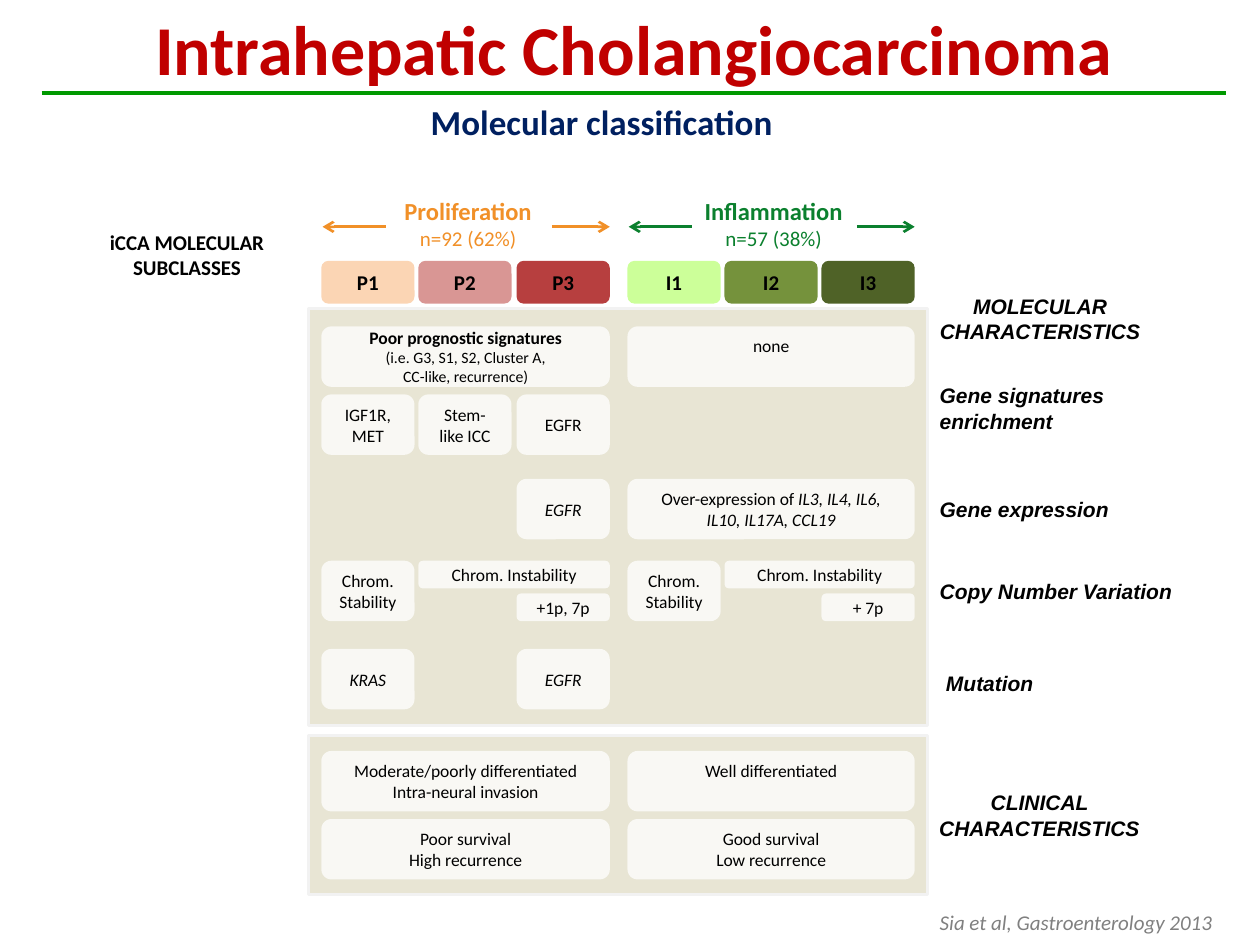
import pptx
import pptx.util
import pptx.dml.color
import pptx.enum.shapes
import pptx.enum.text
import pptx.oxml.ns
from lxml import etree

Inches = pptx.util.Inches
Pt = pptx.util.Pt
RGBColor = pptx.dml.color.RGBColor
SHAPE = pptx.enum.shapes.MSO_SHAPE
ALIGN = pptx.enum.text.PP_ALIGN
ANCHOR = pptx.enum.text.MSO_ANCHOR

BLACK = RGBColor(0, 0, 0)
WHITE = RGBColor(255, 255, 255)
RED = RGBColor(0xC0, 0, 0)
NAVY = RGBColor(0, 0x20, 0x60)
GRAY = RGBColor(0x80, 0x80, 0x80)
RULE_GREEN = RGBColor(0, 0x99, 0)
ORANGE = RGBColor(0xF1, 0x90, 0x28)
GREEN = RGBColor(0x0B, 0x80, 0x2E)
SAND = RGBColor(0xE8, 0xE5, 0xD4)
PANEL_EDGE = RGBColor(0xF2, 0xF2, 0xF2)

# Grid: two classes of three columns each
COLUMN_LEFT = [2.55, 3.32, 4.1, 4.98, 5.75, 6.52]
COLUMN_WIDTH = 0.74
ROW_TOP = {"subclass": 2.07, "signature": 2.59, "marker": 3.13,
           "expression": 3.8, "copy number": 4.45, "arm": 4.71,
           "mutation": 5.15, "grade": 5.96, "outcome": 6.5}
CELL_HEIGHT, SUBCLASS_HEIGHT, STRIP_HEIGHT = 0.48, 0.34, 0.22

# Content: a paragraph is a list of (text, size, style) runs
TITLE = [[("Intrahepatic Cholangiocarcinoma", 40, "b")]]
SUBTITLE = [[("Molecular classification", 20, "b")]]
CITATION = [[("Sia et al, Gastroenterology 2013", 12, "i")]]
SUBCLASS_LABEL = [[("iCCA MOLECULAR SUBCLASSES", 12, "b")]]
PANELS = [(2.45, 3.31), (5.84, 1.26)]
CLASSES = [("Proliferation", "n=92 (62%)", ORANGE, 0),
           ("Inflammation", "n=57 (38%)", GREEN, 3)]
SUBCLASSES = [("P1", RGBColor(0xFB, 0xD5, 0xB4)),
              ("P2", RGBColor(0xD9, 0x96, 0x94)),
              ("P3", RGBColor(0xB7, 0x3F, 0x3F)),
              ("I1", RGBColor(0xCC, 0xFF, 0x99)),
              ("I2", RGBColor(0x75, 0x92, 0x3C)),
              ("I3", RGBColor(0x4F, 0x62, 0x27))]


def lines(*texts, style=""):
    return [[(text, 10, style)] for text in texts]


# row, first column, columns spanned, paragraphs, height, anchor
MIDDLE, TOP = ANCHOR.MIDDLE, ANCHOR.TOP
CELLS = [
    ("signature", 0, 3, [[("Poor prognostic signatures", 10, "b")],
                         [("(i.e. G3, S1, S2, Cluster A,", 9, "")],
                         [("CC-like, recurrence)", 9, "")]], CELL_HEIGHT, MIDDLE),
    ("signature", 3, 3, lines("none"), CELL_HEIGHT, TOP),
    ("marker", 0, 1, lines("IGF1R, MET"), CELL_HEIGHT, MIDDLE),
    ("marker", 1, 1, lines("Stem-like ICC"), CELL_HEIGHT, MIDDLE),
    ("marker", 2, 1, lines("EGFR"), CELL_HEIGHT, MIDDLE),
    ("expression", 2, 1, lines("EGFR", style="i"), CELL_HEIGHT, MIDDLE),
    ("expression", 3, 3, [[("Over-expression of ", 10, ""),
                           ("IL3, IL4, IL6, IL10, IL17A, CCL19", 10, "i")]],
     CELL_HEIGHT, TOP),
    ("copy number", 0, 1, lines("Chrom. Stability"), CELL_HEIGHT, MIDDLE),
    ("copy number", 1, 2, lines("Chrom. Instability"), STRIP_HEIGHT, MIDDLE),
    ("arm", 2, 1, lines("+1p, 7p"), STRIP_HEIGHT, MIDDLE),
    ("copy number", 3, 1, lines("Chrom. Stability"), CELL_HEIGHT, MIDDLE),
    ("copy number", 4, 2, lines("Chrom. Instability"), STRIP_HEIGHT, MIDDLE),
    ("arm", 5, 1, lines("+ 7p"), STRIP_HEIGHT, MIDDLE),
    ("mutation", 0, 1, lines("KRAS", style="i"), CELL_HEIGHT, MIDDLE),
    ("mutation", 2, 1, lines("EGFR", style="i"), CELL_HEIGHT, MIDDLE),
    ("grade", 0, 3, lines("Moderate/poorly differentiated",
                          "Intra-neural invasion"), CELL_HEIGHT, MIDDLE),
    ("grade", 3, 3, lines("Well differentiated"), CELL_HEIGHT, TOP),
    ("outcome", 0, 3, lines("Poor survival", "High recurrence"), CELL_HEIGHT, MIDDLE),
    ("outcome", 3, 3, lines("Good survival", "Low recurrence"), CELL_HEIGHT, MIDDLE),
]
# text, left, top, width, height, alignment
SIDE_LABELS = [
    ("MOLECULAR CHARACTERISTICS", 7.15, 2.28, 2.21, 0.5, ALIGN.CENTER),
    ("Gene signatures enrichment", 7.36, 2.99, 2.24, 0.5, ALIGN.LEFT),
    ("Gene expression", 7.36, 3.89, 2.24, 0.3, ALIGN.LEFT),
    ("Copy Number Variation", 7.36, 4.54, 2.24, 0.3, ALIGN.LEFT),
    ("Mutation", 7.41, 5.27, 2.24, 0.3, ALIGN.LEFT),
    ("CLINICAL CHARACTERISTICS", 7.15, 6.22, 2.2, 0.51, ALIGN.CENTER),
]


def write(shape, paragraphs, color=BLACK, font="Calibri",
          align=ALIGN.CENTER, anchor=TOP, wrap=True):
    frame = shape.text_frame
    frame.word_wrap = wrap
    frame.vertical_anchor = anchor
    for index, runs in enumerate(paragraphs):
        para = frame.paragraphs[0] if index == 0 else frame.add_paragraph()
        para.alignment = align
        for text, size, style in runs:
            span = para.add_run()
            span.text = text
            span.font.name = font
            span.font.size = Pt(size)
            span.font.bold = "b" in style
            span.font.italic = "i" in style
            span.font.color.rgb = color


def add_text(page, place, paragraphs, **options):
    box = page.shapes.add_textbox(*map(Inches, place))
    write(box, paragraphs, **options)


def add_block(page, kind, place, fill, edge=None, opacity=None):
    block = page.shapes.add_shape(kind, *map(Inches, place))
    block.shadow.inherit = False
    block.fill.solid()
    block.fill.fore_color.rgb = fill
    if opacity:
        color = block.fill._xPr.find(".//" + pptx.oxml.ns.qn("a:srgbClr"))
        alpha = etree.SubElement(color, pptx.oxml.ns.qn("a:alpha"))
        alpha.set("val", str(opacity * 1000))
    if edge is None:
        block.line.fill.background()
    else:
        block.line.color.rgb = edge
        block.line.width = Pt(1.5)
    return block


def add_line(page, start, end, y, color, width, arrow=False):
    line = page.shapes.add_connector(pptx.enum.shapes.MSO_CONNECTOR.STRAIGHT,
                                     Inches(start), Inches(y), Inches(end), Inches(y))
    line.line.color.rgb = color
    line.line.width = Pt(width)
    if arrow:
        tail = etree.SubElement(line.line._get_or_add_ln(), pptx.oxml.ns.qn("a:tailEnd"))
        tail.set("type", "arrow")
    etree.SubElement(line._element.spPr, pptx.oxml.ns.qn("a:effectLst"))


def span_width(first, count):
    last = first + count - 1
    return COLUMN_LEFT[last] + COLUMN_WIDTH - COLUMN_LEFT[first]


def main():
    deck = pptx.Presentation()
    deck.slide_width, deck.slide_height = Inches(10), Inches(7.5)
    page = deck.slides.add_slide(deck.slide_layouts[5])

    # Heading
    title = page.shapes.title
    title.left, title.top, title.width, title.height = map(Inches, (0.53, -0.25, 9, 1.25))
    write(title, TITLE, color=RED, anchor=MIDDLE)
    add_line(page, 0.33, 9.73, 0.74, RULE_GREEN, 2.25)
    add_text(page, (1.58, 0.75, 6.39, 0.44), SUBTITLE, color=NAVY)

    # Background panels
    for top, height in PANELS:
        add_block(page, SHAPE.RECTANGLE, (2.45, top, 4.91, height), SAND, PANEL_EDGE)

    # Class headings between outward arrows
    add_text(page, (0.35, 1.77, 2.27, 0.5), SUBCLASS_LABEL)
    for name, share, color, first in CLASSES:
        left, width = COLUMN_LEFT[first], span_width(first, 3)
        add_text(page, (left + 0.02, 1.51, width, 0.6),
                 [[(name, 14, "b")], [(share, 12, "")]], color=color)
        add_line(page, left + 0.51, left + 0.01, 1.8, color, 1.5, arrow=True)
        add_line(page, left + width - 0.46, left + width, 1.8, color, 1.5, arrow=True)

    # Subclass row
    for left, (name, color) in zip(COLUMN_LEFT, SUBCLASSES):
        place = (left, ROW_TOP["subclass"], COLUMN_WIDTH, SUBCLASS_HEIGHT)
        block = add_block(page, SHAPE.ROUNDED_RECTANGLE, place, color)
        write(block, [[(name, 12, "b")]], anchor=MIDDLE)

    # Findings
    for row, first, count, paragraphs, height, anchor in CELLS:
        place = (COLUMN_LEFT[first], ROW_TOP[row], span_width(first, count), height)
        block = add_block(page, SHAPE.ROUNDED_RECTANGLE, place, WHITE, opacity=75)
        write(block, paragraphs, anchor=anchor)

    # Row labels and citation
    for text, left, top, width, height, align in SIDE_LABELS:
        add_text(page, (left, top, width, height), [[(text, 12, "bi")]],
                 font="Arial", align=align)
    add_text(page, (7.36, 7.17, 2.39, 0.3), CITATION, color=GRAY,
             align=ALIGN.LEFT, wrap=False)

    deck.save("out.pptx")


if __name__ == "__main__":
    main()
